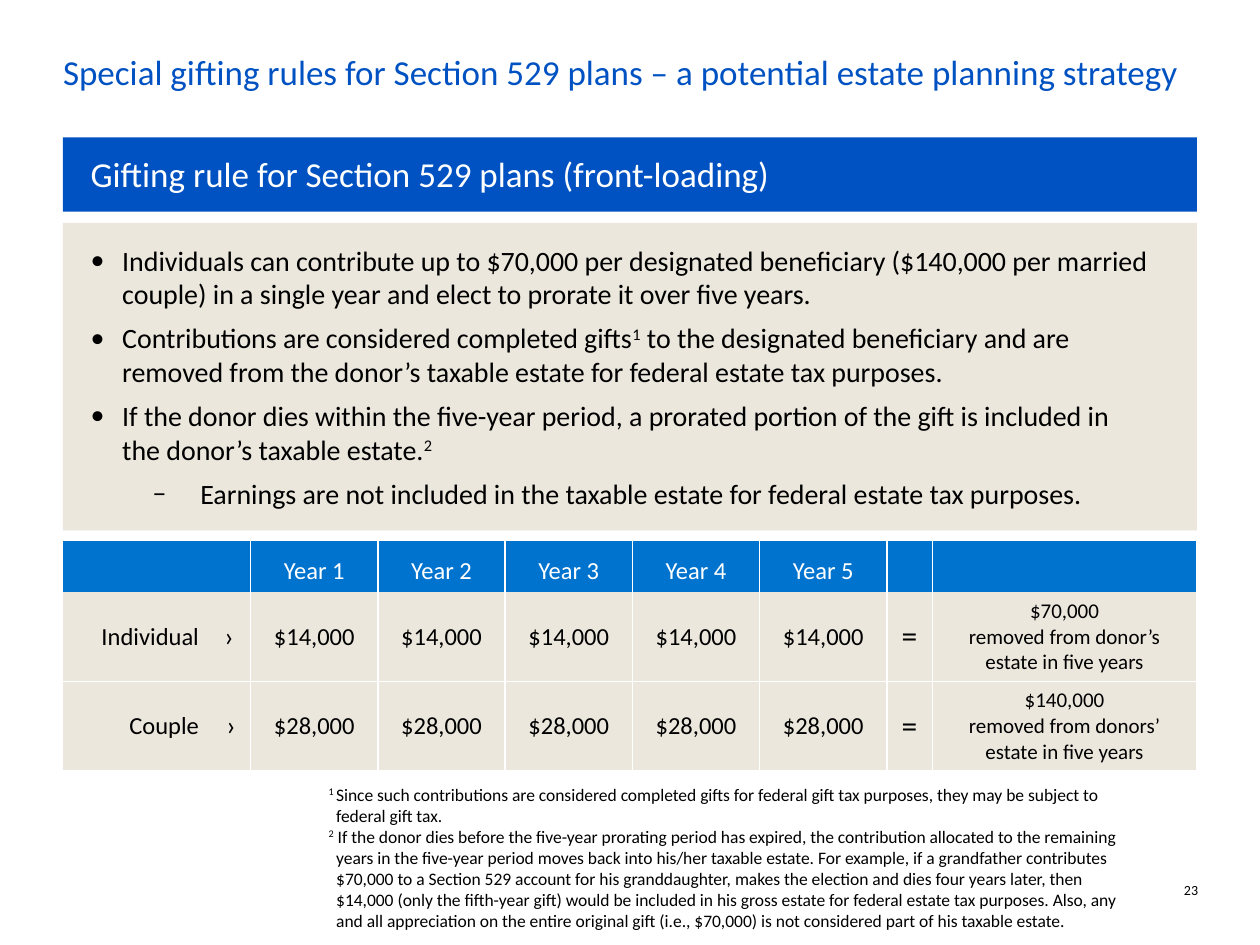
from lxml.etree import SubElement
from pptx import Presentation
from pptx.dml.color import RGBColor
from pptx.enum.shapes import MSO_SHAPE
from pptx.enum.text import MSO_ANCHOR, MSO_AUTO_SIZE, PP_ALIGN
from pptx.oxml import parse_xml
from pptx.oxml.ns import nsdecls, qn
from pptx.util import Inches, Pt

BLUE = RGBColor(0x00, 0x52, 0xC2)
SKY = RGBColor(0x00, 0x73, 0xCF)
SAND = RGBColor(0xEB, 0xE7, 0xDD)
WHITE = RGBColor(0xFF, 0xFF, 0xFF)
BLACK = RGBColor(0x00, 0x00, 0x00)
LEFT, RIGHT, MID = PP_ALIGN.LEFT, PP_ALIGN.RIGHT, PP_ALIGN.CENTER
PLAIN = "{2D5ABB26-0587-4C30-8999-92F81FD0307C}"  # no style, no grid


def write(para, text, size, color=BLACK, align=LEFT):
    """Fill a paragraph; ^...^ is superscript, a newline is a line break."""
    para.alignment = align
    for i, part in enumerate(text.split("^")):
        for j, line in enumerate(part.split("\n")):
            if j:
                para.add_line_break()
            if not line:
                continue
            run = para.add_run()
            run.text = line
            look = {"name": "Calibri", "size": Pt(size), "bold": False}
            for key, value in look.items():
                setattr(run.font, key, value)
            run.font.color.rgb = color
            if i % 2:
                run.font._element.set("baseline", "30000")


def place(shape, left, top, width, height, inset=(0.1, 0.05)):
    """Set a text shape's place and frame; return the frame."""
    spot = {"left": left, "top": top, "width": width, "height": height}
    for key, value in spot.items():
        setattr(shape, key, Inches(value))
    frame = shape.text_frame
    side, edge = Inches(inset[0]), Inches(inset[1])
    form = {"word_wrap": True, "auto_size": MSO_AUTO_SIZE.NONE,
            "vertical_anchor": MSO_ANCHOR.TOP, "margin_left": side,
            "margin_right": side, "margin_top": edge, "margin_bottom": edge}
    for key, value in form.items():
        setattr(frame, key, value)
    return frame


deck = Presentation()
deck.slide_width, deck.slide_height = Inches(10), Inches(7.5)
slide = deck.slides.add_slide(deck.slide_layouts[1])
shapes = slide.shapes

# Panel and banner, sent behind the placeholders
for top, height, fill in [(1.09, 0.59, BLUE), (1.77, 2.44, SAND)]:
    rect = shapes.add_shape(MSO_SHAPE.RECTANGLE, Inches(0.5), Inches(top),
                            Inches(9), Inches(height))
    rect.shadow.inherit = False
    rect.fill.solid()
    rect.fill.fore_color.rgb = fill
    rect.line.fill.background()
    shapes._spTree.insert(2, rect._element)

# Title
frame = place(shapes.title, 0.5, 0.35, 9, 0.63, (0, 0.05))
write(frame.paragraphs[0], "Special gifting rules for Section 529 plans – "
      "a potential estate planning strategy", 20, BLUE)

# Banner text
box = shapes.add_textbox(0, 0, 0, 0)
frame = place(box, 0.62, 1.16, 8.71, 0.44)
write(frame.paragraphs[0], "Gifting rule for Section 529 plans (front-loading)",
      20, WHITE)

# Bullets: level, mark, left margin, hanging indent, text
rules = [
    (0, "•", 0.38, 0.25, "Individuals can contribute up to $70,000 per designated "
     "beneficiary ($140,000 per married couple) in a single year and elect to "
     "prorate it over five years."),
    (0, "•", 0.38, 0.25, "Contributions are considered completed gifts^1^ to the "
     "designated beneficiary and are removed from the donor’s taxable estate for "
     "federal estate tax purposes."),
    (0, "•", 0.38, 0.25, "If the donor dies within the five-year period, a prorated "
     "portion of the gift is included in \nthe donor’s taxable estate.^2^"),
    (2, "‒", 1, 0.38, "Earnings are not included in the taxable estate for federal "
     "estate tax purposes."),
]
frame = place(slide.placeholders[1], 0.49, 1.88, 8.84, 2.24)
for i, (level, mark, left, hang, text) in enumerate(rules):
    para = frame.add_paragraph() if i else frame.paragraphs[0]
    para.level = level
    para.space_before, para.space_after = Pt(0), Pt(6)
    props = para._p.get_or_add_pPr()
    props.set("marL", str(Inches(left)))
    props.set("indent", str(-Inches(hang)))
    SubElement(props, qn("a:buFont")).set("typeface", "Calibri")
    SubElement(props, qn("a:buChar")).set("char", mark)
    write(para, text, 16)

# Table
rows = [
    ["", ""] + [f"Year {n}" for n in range(1, 6)] + ["", ""],
    ["Individual", "›"] + ["$14,000"] * 5
    + ["=", "$70,000\nremoved from donor’s\nestate in five years"],
    ["Couple", "›"] + ["$28,000"] * 5
    + ["=", "$140,000\nremoved from donors’ estate in five years"],
]
wide = [1.19, 0.31] + [1.01] * 5 + [0.36, 2.1]
tall = [0.41, 0.7, 0.7]
sizes = [14, 16] + [14] * 5 + [18, 12]
table = shapes.add_table(3, 9, Inches(0.49), Inches(4.29),
                         Inches(sum(wide)), Inches(sum(tall))).table
table._tbl.tblPr.find(qn("a:tableStyleId")).text = PLAIN
table.first_row = table.horz_banding = False
for col, width in zip(table.columns, wide):
    col.width = Inches(width)
for r, row in enumerate(rows):
    table.rows[r].height = Inches(tall[r])
    for c, text in enumerate(row):
        cell = table.cell(r, c)
        cell.vertical_anchor = MSO_ANCHOR.MIDDLE if r else MSO_ANCHOR.BOTTOM
        cell.fill.solid()
        cell.fill.fore_color.rgb = SAND if r else SKY
        align = RIGHT if c == 0 else LEFT if (r, c) == (1, 1) else MID
        if text:
            write(cell.text_frame.paragraphs[0], text, sizes[c],
                  BLACK if r else WHITE, align)
        # White rules, except inside the first and last column pairs
        # and below the header
        edges = {"lnL": c not in (1, 8), "lnR": c not in (0, 7),
                 "lnT": r != 1, "lnB": r != 0}
        drawn = [edge for edge, shown in edges.items() if shown]
        for i, edge in enumerate(drawn):
            cell._tc.get_or_add_tcPr().insert(i, parse_xml(
                f'<a:{edge} {nsdecls("a")} w="12700"><a:solidFill>'
                f'<a:srgbClr val="{WHITE}"/></a:solidFill></a:{edge}>'))

# Footnotes
notes = [
    "^1 ^Since such contributions are considered completed gifts for federal gift "
    "tax purposes, they may be subject to federal gift tax.",
    "^2^ If the donor dies before the five-year prorating period has expired, the "
    "contribution allocated to the remaining years in the five-year period moves "
    "back into his/her taxable estate. For example, if a grandfather contributes "
    "$70,000 to a Section 529 account for his granddaughter, makes the election and "
    "dies four years later, then $14,000 (only the fifth-year gift) would be "
    "included in his gross estate for federal estate tax purposes. Also, any and "
    "all appreciation on the entire original gift (i.e., $70,000) is not considered "
    "part of his taxable estate.",
]
frame = place(shapes.add_textbox(0, 0, 0, 0), 2.44, 6.17, 6.7, 1.28)
for i, text in enumerate(notes):
    para = frame.add_paragraph() if i else frame.paragraphs[0]
    props = para._p.get_or_add_pPr()
    props.set("marL", str(Inches(0.13)))
    props.set("indent", str(-Inches(0.06)))
    write(para, text, 10)

# Page number
frame = place(shapes.add_textbox(0, 0, 0, 0), 9.07, 7, 0.44, 0.14, (0, 0))
write(frame.paragraphs[0], "23", 8, BLACK, RIGHT)

deck.save("out.pptx")
